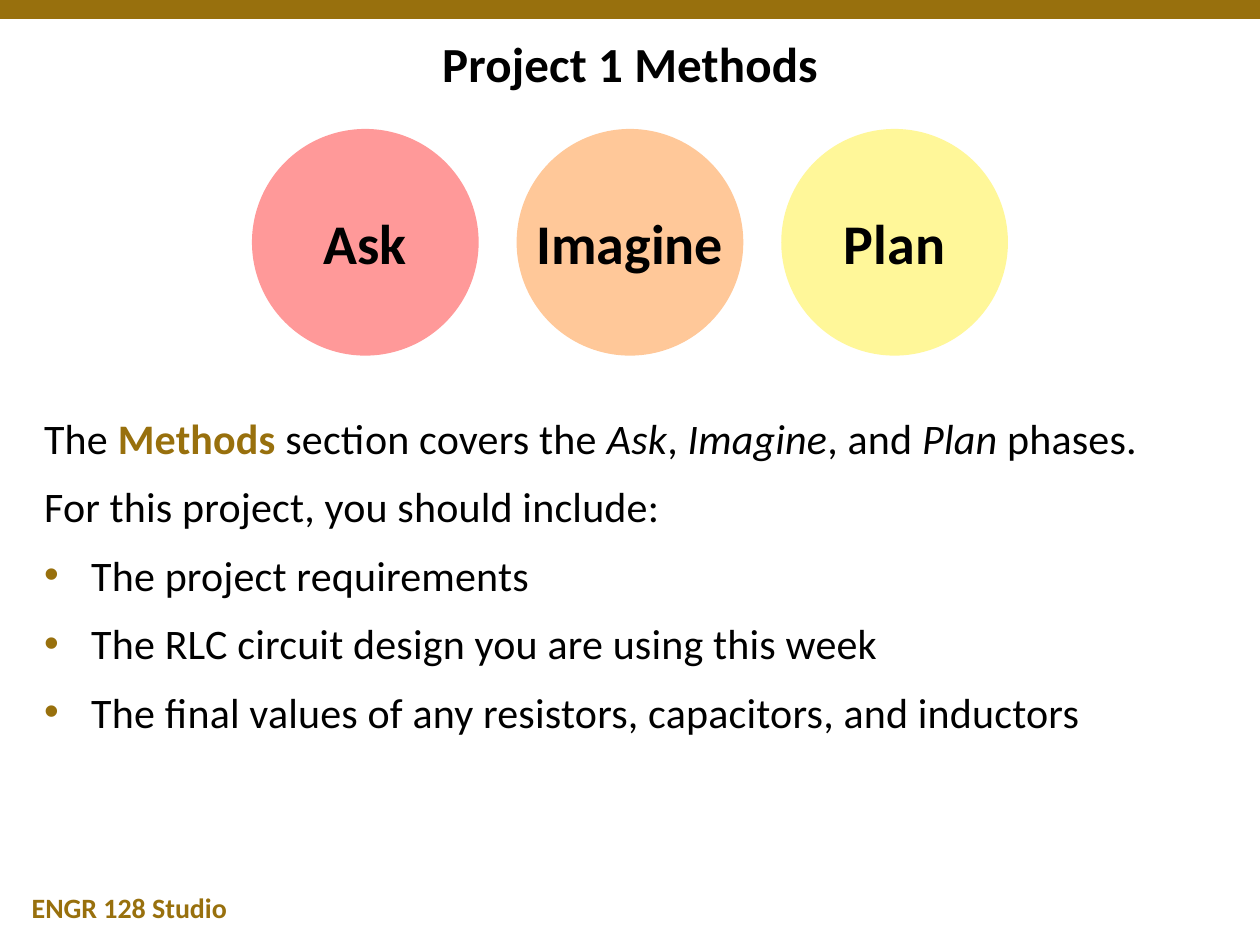
from lxml import etree
from pptx import Presentation
from pptx import util as u
from pptx.dml.color import RGBColor
from pptx.enum import shapes, text
from pptx.oxml.ns import qn

COLORS = {
    "gold": "98700D",
    "black": "000000",
    "ask": "FF9999",
    "imagine": "FFC899",
    "plan": "FFF799",
}
FONT = "Calibri"


def color(name):
    return RGBColor.from_string(COLORS[name])


def set_values(target, values):
    for name, value in values.items():
        setattr(target, name, value)


def add_run(paragraph, words, size, color_name="black", spacing=0, **formats):
    run = paragraph.add_run()
    run.text = words
    set_values(run.font, {"name": FONT, "size": u.Pt(size), **formats})
    run.font.color.rgb = color(color_name)
    if spacing:  # letter spacing in hundredths of a point
        run._r.get_or_add_rPr().set("spc", str(spacing))


def add_shape(parent, kind, box, fill):
    shape = parent.add_shape(kind, *map(u.Cm, box))
    shape.shadow.inherit = False
    shape.fill.solid()
    shape.fill.fore_color.rgb = color(fill)
    shape.line.fill.background()
    return shape


def add_text_frame(slide, box, **formats):
    frame = slide.shapes.add_textbox(*map(u.Cm, box)).text_frame
    set_values(frame, {"word_wrap": True, **formats})
    return frame


def add_bullet(paragraph, indent):
    properties = paragraph._p.get_or_add_pPr()
    properties.set("marL", str(u.Cm(indent)))
    properties.set("indent", str(-u.Cm(indent)))
    bullet_color = etree.SubElement(properties, qn("a:buClr"))
    etree.SubElement(bullet_color, qn("a:srgbClr"), val=COLORS["gold"])
    etree.SubElement(properties, qn("a:buFont"), typeface="Arial")
    etree.SubElement(properties, qn("a:buChar"), char="•")


def build_title(slide, box):
    frame = add_text_frame(slide, box, margin_top=0, margin_bottom=0,
                           vertical_anchor=text.MSO_ANCHOR.MIDDLE)
    paragraph = frame.paragraphs[0]
    paragraph.alignment = text.PP_ALIGN.CENTER
    add_run(paragraph, "Project 1 Methods", 28, spacing=10, bold=True)


def build_phases(slide, box):
    left, top, width, diameter = box
    phases = ["Ask", "Imagine", "Plan"]
    step = (width - diameter) / (len(phases) - 1)
    group = slide.shapes.add_group_shape()
    for index, phase in enumerate(phases):
        circle_box = (left + index * step, top, diameter, diameter)
        circle = add_shape(group.shapes, shapes.MSO_SHAPE.OVAL, circle_box,
                           phase.lower())
        set_values(circle.text_frame, {
            "word_wrap": False,
            "vertical_anchor": text.MSO_ANCHOR.MIDDLE,
        })
        paragraph = circle.text_frame.paragraphs[0]
        paragraph.alignment = text.PP_ALIGN.CENTER
        add_run(paragraph, phase, 32, bold=True)


def build_body(slide, box, text_offset):
    frame = add_text_frame(slide, box, margin_top=u.Cm(text_offset))
    italic = {"italic": True}
    intro = [
        ("The ", {}),
        ("Methods", {"color_name": "gold", "bold": True}),
        (" section covers the ", {}),
        ("Ask", italic), (", ", {}),
        ("Imagine", italic), (", and ", {}),
        ("Plan", italic), (" phases.", {}),
    ]
    lead = [("For this project, you should include:", {})]
    bullets = [
        "The project requirements",
        "The RLC circuit design you are using this week",
        "The final values of any resistors, capacitors, and inductors",
    ]
    lines = [(intro, False), (lead, False)]
    lines += [([(bullet, {})], True) for bullet in bullets]

    for index, (runs, bulleted) in enumerate(lines):
        paragraph = frame.add_paragraph() if index else frame.paragraphs[0]
        set_values(paragraph, {
            "space_before": u.Pt(4.3 if index else 0),
            "space_after": u.Pt(6),
        })
        if bulleted:
            add_bullet(paragraph, 0.95)
        for words, formats in runs:
            add_run(paragraph, words, 24, spacing=10, **formats)


def build_footer(slide, box):
    frame = add_text_frame(slide, box, margin_left=0,
                           vertical_anchor=text.MSO_ANCHOR.MIDDLE)
    add_run(frame.paragraphs[0], "ENGR 128 Studio", 16, "gold", bold=True)


def main():
    presentation = Presentation()
    presentation.slide_width = u.Cm(25.4)
    presentation.slide_height = u.Cm(19.05)
    slide = presentation.slides.add_slide(presentation.slide_layouts[6])

    # Top band
    add_shape(slide.shapes, shapes.MSO_SHAPE.RECTANGLE,
              (0, 0, 25.4, 0.38), "gold")
    # Title, body, footer and phase circles
    build_title(slide, (0.64, 0.64, 24.13, 1.27))
    build_body(slide, (0.64, 2.54, 24.13, 15.24), text_offset=5.77)
    build_footer(slide, (0.64, 17.78, 8.13, 1.02))
    build_phases(slide, (5.08, 2.6, 15.24, 4.57))

    presentation.save("out.pptx")


if __name__ == "__main__":
    main()
